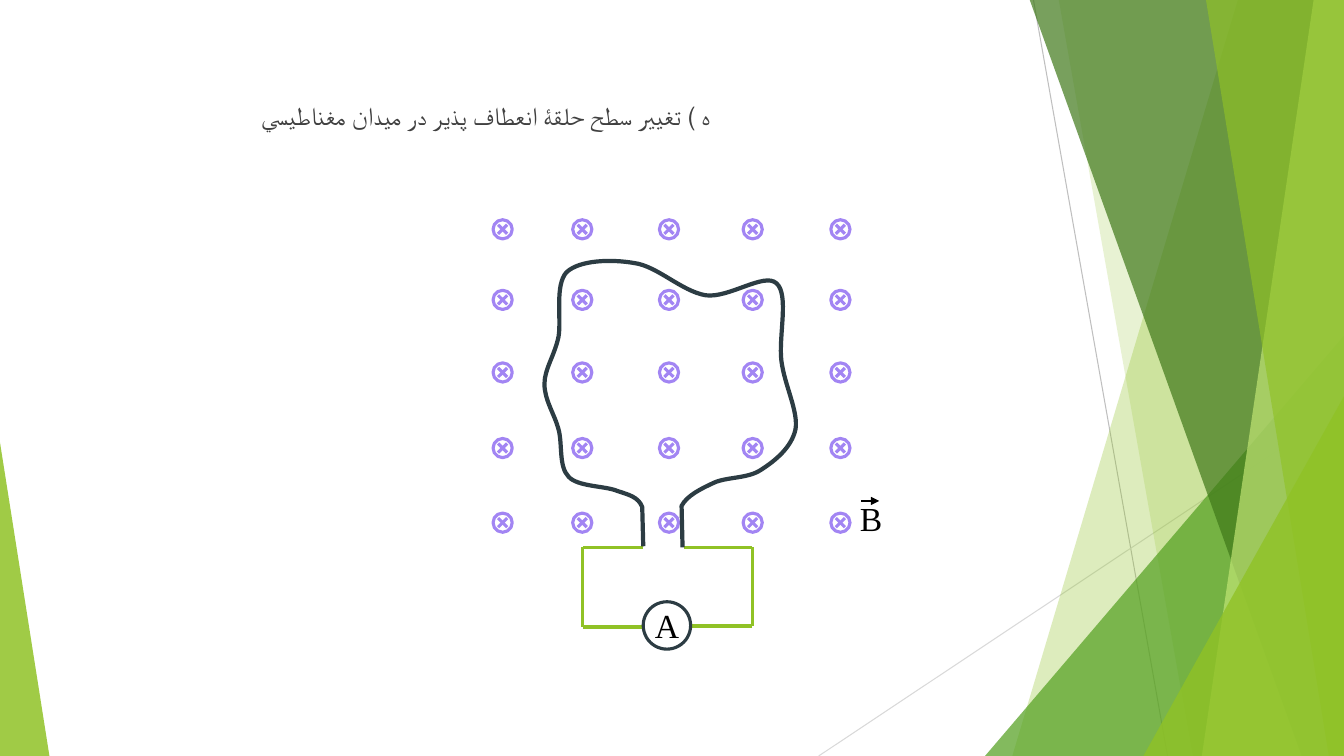
from lxml import etree
from pptx import Presentation
from pptx.dml.color import RGBColor
from pptx.enum.shapes import MSO_CONNECTOR, MSO_SHAPE
from pptx.enum.text import MSO_ANCHOR, MSO_AUTO_SIZE, PP_ALIGN
from pptx.oxml.ns import qn
from pptx.util import Inches, Pt

COLORS = {
    "lime": "90C226",
    "green": "54A021",
    "forest": "3F7819",
    "pale": "C0E474",
    "gray": "BFBFBF",
    "light_gray": "D9D9D9",
    "text": "404040",
    "field": "A285F3",
    "wire": "2C3C43",
    "black": "000000",
}


def add_line(start, end, color, width):
    line = slide.shapes.add_connector(
        MSO_CONNECTOR.STRAIGHT, *[Inches(value) for value in start + end])
    line.line.color.rgb = RGBColor.from_string(COLORS[color])
    line.line.width = Pt(width)
    etree.SubElement(line._element.spPr, qn("a:effectLst"))
    return line


def paint(shape, fill=None, opacity=100, outline=None, width=0):
    shape.shadow.inherit = False
    if fill:
        shape.fill.solid()
        shape.fill.fore_color.rgb = RGBColor.from_string(COLORS[fill])
        color = shape._element.spPr.find(qn("a:solidFill"))[0]
        etree.SubElement(color, qn("a:alpha"), val=str(opacity * 1000))
    else:
        shape.fill.background()
    if outline:
        shape.line.color.rgb = RGBColor.from_string(COLORS[outline])
        shape.line.width = Pt(width)
    else:
        shape.line.fill.background()


presentation = Presentation()
presentation.slide_width = Inches(13.33)
presentation.slide_height = Inches(7.5)
slide = presentation.slides.add_slide(presentation.slide_layouts[5])

add_line((10.25, 0), (11.58, 7.5), "gray", 0.75)
add_line((13.33, 4.03), (8.12, 7.5), "light_gray", 0.75)

TRIANGLE = "triangle"
facets = [
    ("band", 12.28, 10.04, "lime", 30),
    ("band", 10.5, 11.83, "lime", 20),
    (TRIANGLE, (9.77, 3.33, 3.56, 4.17), 1, "green", 72),
    ("band", 10.21, 12.91, "forest", 70),
    ("band", 13.03, 11.92, "pale", 70),
    ("band", 11.96, 13.18, "lime", 65),
    (TRIANGLE, (11.34, 3.93, 1.99, 3.57), 1, "lime", 80),
    (TRIANGLE, (0, 4.39, 0.49, 3.11), 0, "lime", 85),
]
for kind, first, second, color, opacity in facets:
    if kind == TRIANGLE:
        facet = slide.shapes.add_shape(
            MSO_SHAPE.ISOSCELES_TRIANGLE, *[Inches(value) for value in first])
        facet.adjustments[0] = second
    else:
        builder = slide.shapes.build_freeform(Inches(first), Inches(-0.01))
        corners = [(13.33, -0.01), (13.33, 7.5), (second, 7.5)]
        builder.add_line_segments([(Inches(x), Inches(y)) for x, y in corners], close=True)
        facet = builder.convert_to_shape()
    paint(facet, color, opacity)

title = slide.shapes.title
title.left, title.top = Inches(2.49), Inches(0.94)
title.width, title.height = Inches(8.5), Inches(0.76)
frame = title.text_frame
frame.text = "ه ) تغيير سطح حلقۀ انعطاف پذير در ميدان مغناطيسي"
frame.word_wrap = True
frame.auto_size = MSO_AUTO_SIZE.NONE
frame.vertical_anchor = MSO_ANCHOR.TOP
paragraph = frame.paragraphs[0]
paragraph.alignment = PP_ALIGN.LEFT
paragraph.space_before = Pt(10)
font = paragraph.runs[0].font
font.name = "Karla"
font.size = Pt(18)
font.color.rgb = RGBColor.from_string(COLORS["text"])

for top in (2.18, 2.88, 3.6, 4.35, 5.09):
    for left in (4.89, 5.68, 6.54, 7.37, 8.24):
        ring = slide.shapes.add_shape(
            MSO_SHAPE.OVAL, Inches(left), Inches(top), Inches(0.19), Inches(0.19))
        paint(ring, outline="field", width=2.25)
        near_x, far_x = left + 0.05, left + 0.14
        near_y, far_y = top + 0.05, top + 0.14
        add_line((near_x, near_y), (far_x, far_y), "field", 2.25)
        add_line((near_x, far_y), (far_x, near_y), "field", 2.25)

circuit = [
    ((6.37, 6.22), (5.78, 6.22)),
    ((5.78, 6.22), (5.78, 5.43)),
    ((5.78, 5.43), (6.38, 5.43)),
    ((7.46, 6.21), (6.86, 6.21)),
    ((7.46, 6.21), (7.46, 5.43)),
    ((7.46, 5.43), (6.78, 5.43)),
]
for start, end in circuit:
    add_line(start, end, "lime", 2.25)

ammeter = slide.shapes.add_shape(
    MSO_SHAPE.OVAL, Inches(6.38), Inches(5.97), Inches(0.47), Inches(0.47))
paint(ammeter, outline="wire", width=2.25)
field_label = slide.shapes.add_textbox(
    Inches(8.43), Inches(4.89), Inches(0.42), Inches(0.5))
for shape, letter in ((ammeter, "A"), (field_label, "B")):
    frame = shape.text_frame
    frame.text = letter
    frame.word_wrap = False
    frame.paragraphs[0].alignment = PP_ALIGN.CENTER
    font = frame.paragraphs[0].runs[0].font
    font.name = "Times New Roman"
    font.size = Pt(24)
    font.color.rgb = RGBColor.from_string(COLORS["black"])
frame = ammeter.text_frame
frame.margin_left = frame.margin_right = frame.margin_top = frame.margin_bottom = 0
frame.vertical_anchor = MSO_ANCHOR.MIDDLE

loop_points = [
    (6.76, 5.02),
    (6.81, 4.92), (6.95, 4.85), (7.08, 4.79),
    (7.21, 4.73), (7.42, 4.75), (7.55, 4.66),
    (7.69, 4.57), (7.85, 4.44), (7.89, 4.26),
    (7.92, 4.08), (7.78, 3.82), (7.75, 3.58),
    (7.72, 3.34), (7.83, 2.92), (7.7, 2.81),
    (7.58, 2.7), (7.23, 2.96), (7, 2.93),
    (6.76, 2.89), (6.52, 2.64), (6.29, 2.61),
    (6.06, 2.57), (5.75, 2.58), (5.62, 2.7),
    (5.5, 2.83), (5.57, 3.16), (5.54, 3.34),
    (5.5, 3.53), (5.4, 3.66), (5.4, 3.81),
    (5.4, 3.97), (5.5, 4.11), (5.54, 4.26),
    (5.58, 4.41), (5.54, 4.63), (5.64, 4.73),
    (5.73, 4.83), (6, 4.82), (6.12, 4.87),
    (6.24, 4.91), (6.33, 4.93), (6.37, 5.03),
    (6.38, 5.42),
]
builder = slide.shapes.build_freeform(Inches(6.77), Inches(5.43))
builder.add_line_segments([(Inches(x), Inches(y)) for x, y in loop_points], close=False)
loop = builder.convert_to_shape()
paint(loop, outline="wire", width=3)
segments = list(loop._element.iter(qn("a:lnTo")))[1:-1]
for index in range(0, len(segments), 3):
    curve = etree.Element(qn("a:cubicBezTo"))
    segments[index].addprevious(curve)
    for segment in segments[index:index + 3]:
        curve.append(segment[0])
        segment.getparent().remove(segment)

vector_arrow = add_line((8.54, 4.97), (8.72, 4.97), "black", 1.5)
etree.SubElement(vector_arrow.line._get_or_add_ln(), qn("a:tailEnd"), type="triangle")

presentation.save("out.pptx")
